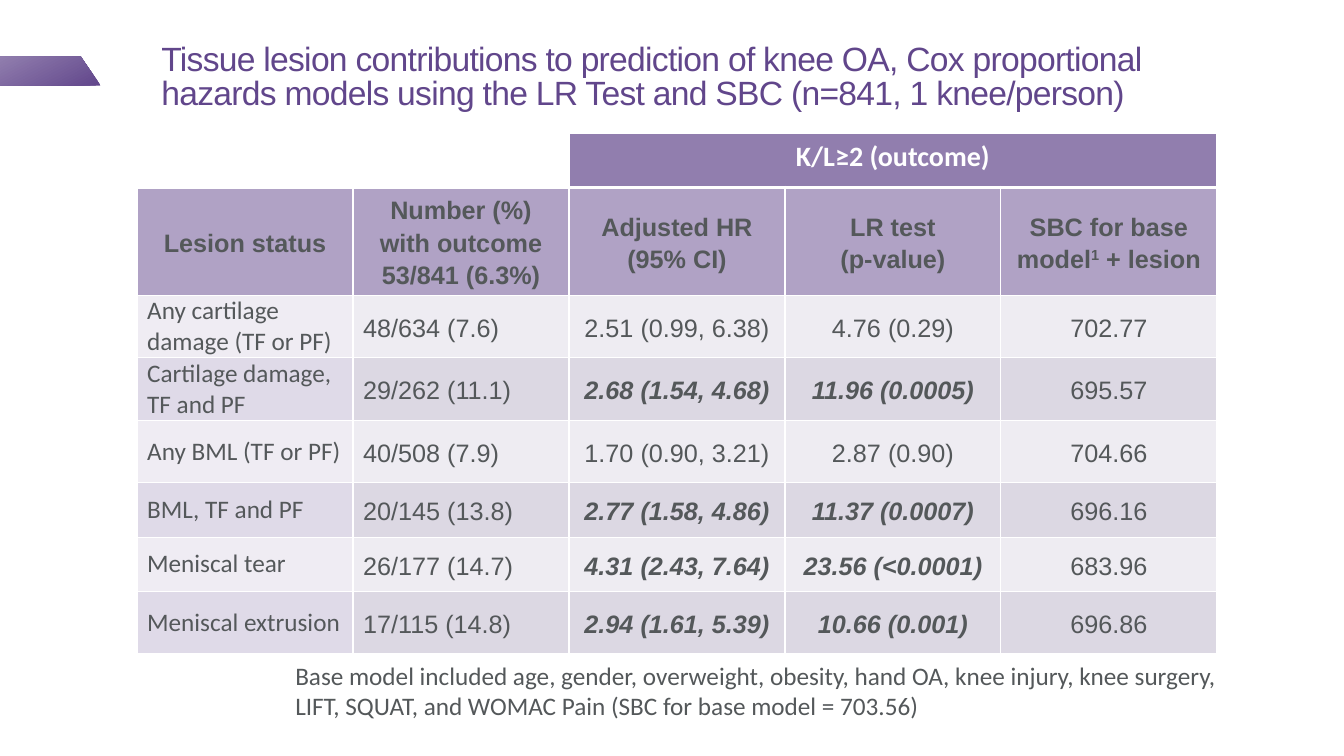
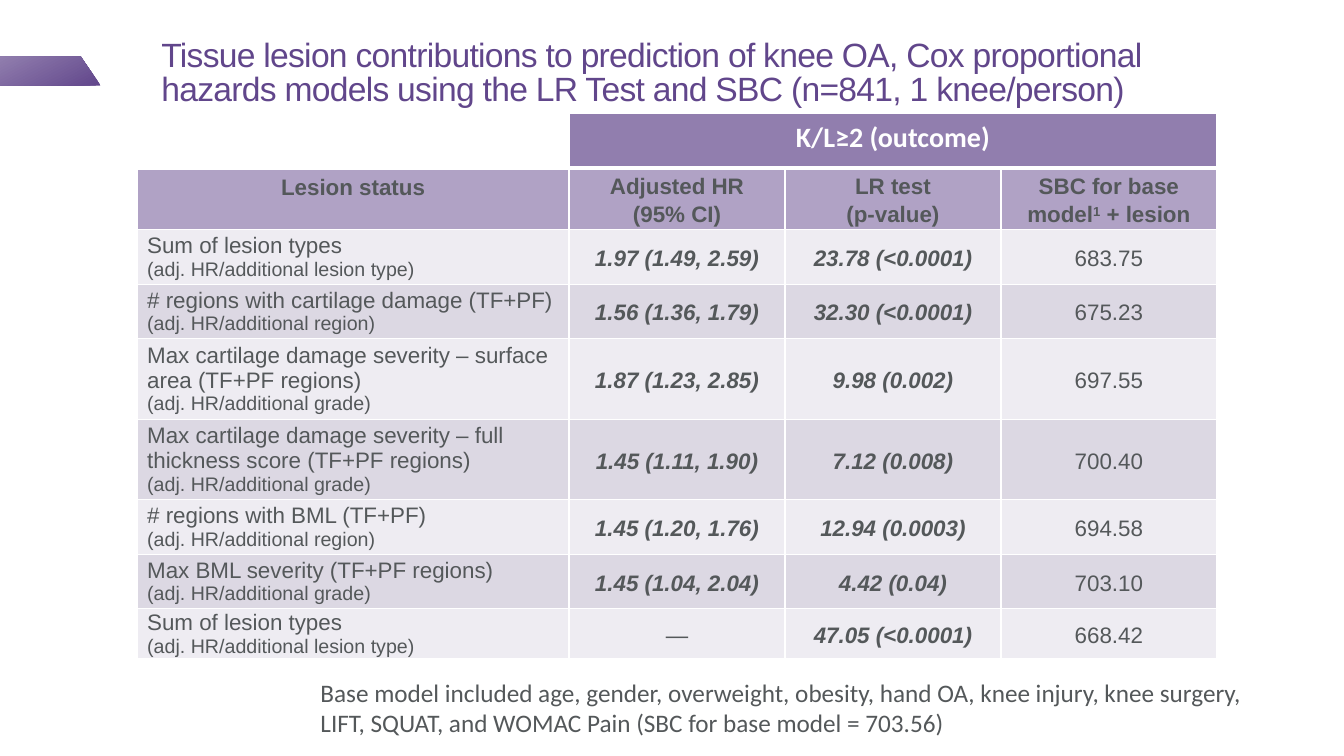
"""Build two slides of knee lesion tables that share one title, ribbon and note style."""
from lxml import etree
from pptx import Presentation
from pptx import util as u
from pptx.dml.color import RGBColor
from pptx.enum import text
from pptx.oxml.ns import qn

COLORS = {
    "title": "61468B", "band": "917EAE", "head": "B0A2C5", "text": "54585A",
    "white": "FFFFFF", "light": "EEECF2", "dark": "DCD8E3",
    "label_light": "EFECF3", "label_dark": "DFDAE8",
}
TITLE = ("Tissue lesion contributions to prediction of knee OA, Cox proportional "
         "hazards models using the LR Test and SBC (n=841, 1 knee/person)")
NOTE = ("Base model included age, gender, overweight, obesity, hand OA, knee injury, "
        "knee surgery, LIFT, SQUAT, and WOMAC Pain (SBC for base model = 703.56)")
OUTCOME = "K/L≥2 (outcome)"
MODEL_HEADS = [["Adjusted HR", "(95% CI)"], ["LR test", "(p-value)"],
               [("SBC for base model", "1", " + lesion")]]
TABLE_LEFT, UNIT = 1.36, 2.142

SLIDES = [
    {
        "title": (1.6, 0.19, 10.47, 0.98), "note": (2.83, 6.5, 9.45, 0.71),
        "top": 1.32, "size": 18, "label_font": "Calibri", "label_fill": "label_",
        "units": [1, 1, 1, 1, 1],
        "heights": [0.54, 1.07, 0.62, 0.62, 0.62, 0.54, 0.54, 0.62],
        "heads": [["Lesion status"], ["Number (%)", "with outcome", "53/841 (6.3%)"]],
        "rows": [
            (["Any cartilage damage (TF or PF)"], "48/634 (7.6)", "2.51 (0.99, 6.38)", "4.76 (0.29)", "702.77"),
            (["Cartilage damage, TF and PF"], "29/262 (11.1)", "2.68 (1.54, 4.68)", "11.96 (0.0005)", "695.57"),
            (["Any BML (TF or PF)"], "40/508 (7.9)", "1.70 (0.90, 3.21)", "2.87 (0.90)", "704.66"),
            (["BML, TF and PF"], "20/145 (13.8)", "2.77 (1.58, 4.86)", "11.37 (0.0007)", "696.16"),
            (["Meniscal tear"], "26/177 (14.7)", "4.31 (2.43, 7.64)", "23.56 (<0.0001)", "683.96"),
            (["Meniscal extrusion"], "17/115 (14.8)", "2.94 (1.61, 5.39)", "10.66 (0.001)", "696.86"),
        ],
    },
    {
        "title": (1.6, 0.25, 10.47, 0.88), "note": (3.08, 6.67, 9.82, 0.71),
        "top": 1.13, "size": 16, "label_font": "Arial", "label_fill": "",
        "units": [2, 1, 1, 1],
        "heights": [0.54, 0.61, 0.54, 0.54, 0.8, 0.8, 0.54, 0.54, 0.5],
        "heads": [["Lesion status"]],
        "rows": [
            (["Sum of lesion types", "(adj. HR/additional lesion type)"],
             "1.97 (1.49, 2.59)", "23.78 (<0.0001)", "683.75"),
            (["# regions with cartilage damage (TF+PF)", "(adj. HR/additional region)"],
             "1.56 (1.36, 1.79)", "32.30 (<0.0001)", "675.23"),
            (["Max cartilage damage severity – surface area (TF+PF regions)", "(adj. HR/additional grade)"],
             "1.87 (1.23, 2.85)", "9.98 (0.002)", "697.55"),
            (["Max cartilage damage severity – full thickness score (TF+PF regions)", "(adj. HR/additional grade)"],
             "1.45 (1.11, 1.90)", "7.12 (0.008)", "700.40"),
            (["# regions with BML (TF+PF)", "(adj. HR/additional region)"],
             "1.45 (1.20, 1.76)", "12.94 (0.0003)", "694.58"),
            (["Max BML severity (TF+PF regions)", "(adj. HR/additional grade)"],
             "1.45 (1.04, 2.04)", "4.42 (0.04)", "703.10"),
            (["Sum of lesion types", "(adj. HR/additional lesion type)"],
             "—", "47.05 (<0.0001)", "668.42"),
        ],
    },
]


def color(name):
    return RGBColor.from_string(COLORS[name])


def add_run(p, words, size, font="Arial", fill="text", bold=False, italic=False):
    r = p.add_run()
    r.text = words
    f = r.font
    f.size, f.name, f.bold, f.italic = u.Pt(size), font, bold, italic
    f.color.rgb = color(fill)
    return r


def place(sp, box):
    sp.left, sp.top, sp.width, sp.height = map(u.Inches, box)


def add_ribbon(prs, layout):
    s = prs.slides[0]
    builder = s.shapes.build_freeform(0, u.Inches(0.56))
    builder.add_line_segments([(u.Inches(x), u.Inches(y)) for x, y in
                               [(0.8, 0.56), (1, 0.85), (0, 0.85)]])
    sp = builder.convert_to_shape()
    sp.shadow.inherit = False
    sp.line.fill.background()
    sp.fill.gradient()
    sp.fill.gradient_angle = 118
    for stop, name in zip(sp.fill.gradient_stops, ("title", "band")):
        stop.color.rgb = color(name)
    layout.shapes.element.append(sp.element)


def add_title(s, box):
    sp = s.shapes.title
    place(sp, box)
    tf = sp.text_frame
    tf.word_wrap, tf.auto_size = True, text.MSO_AUTO_SIZE.NONE
    tf.vertical_anchor = text.MSO_ANCHOR.BOTTOM
    tf.margin_left = tf.margin_top = 0
    tf.margin_right, tf.margin_bottom = u.Inches(0.1), u.Inches(0.05)
    p = tf.paragraphs[0]
    p.alignment, p.line_spacing = text.PP_ALIGN.LEFT, 0.85
    add_run(p, TITLE, 24, fill="title").font._element.set("spc", "-50")


def add_note(s, box):
    sp = s.shapes.add_textbox(*map(u.Inches, box))
    tf = sp.text_frame
    tf.word_wrap, tf.auto_size = True, text.MSO_AUTO_SIZE.SHAPE_TO_FIT_TEXT
    add_run(tf.paragraphs[0], NOTE, 18, "Calibri")


def style_cell(cell, fill, top=1, bottom=1, roomy=False):
    tc_pr = cell._tc.get_or_add_tcPr()
    for side, width in zip("LRTB", (1, 1, top, bottom)):
        ln = etree.SubElement(tc_pr, qn(f"a:ln{side}"), w=str(u.Pt(width)))
        solid = etree.SubElement(ln, qn("a:solidFill"))
        etree.SubElement(solid, qn("a:srgbClr"), val=COLORS["white"])
    cell.fill.solid()
    cell.fill.fore_color.rgb = color(fill)
    cell.margin_left = cell.margin_right = u.Inches(0.13 if roomy else 0.1)
    cell.margin_top = cell.margin_bottom = u.Inches(0.07 if roomy else 0)
    cell.vertical_anchor = text.MSO_ANCHOR.TOP if roomy else text.MSO_ANCHOR.MIDDLE


def write_cell(cell, lines, sizes, centered=True, spacing=1.15, **style):
    tf = cell.text_frame
    for i, line in enumerate(lines):
        p = tf.add_paragraph() if i else tf.paragraphs[0]
        p.alignment = text.PP_ALIGN.CENTER if centered else text.PP_ALIGN.LEFT
        p.line_spacing = spacing
        parts = (line,) if isinstance(line, str) else line
        for j, part in enumerate(parts):
            r = add_run(p, part, sizes[min(i, len(sizes) - 1)], **style)
            if j == 1:
                r.font._element.set("baseline", "30000")


def add_lesion_table(s, data):
    units, heights, size = data["units"], data["heights"], data["size"]
    frame = s.shapes.add_table(len(heights), len(units), u.Inches(TABLE_LEFT), u.Inches(data["top"]),
                               u.Inches(sum(units) * UNIT), u.Inches(sum(heights)))
    table = frame.table
    table.first_row = table.horz_banding = False
    for col, n in zip(table.columns, units):
        col.width = u.Inches(n * UNIT)
    for row, height in zip(table.rows, heights):
        row.height = u.Inches(height)

    first = len(units) - len(MODEL_HEADS)
    for c in range(len(units)):
        style_cell(table.cell(0, c), "band" if c >= first else "white", bottom=3, roomy=True)
    if first > 1:
        table.cell(0, 0).merge(table.cell(0, first - 1))
    table.cell(0, first).merge(table.cell(0, len(units) - 1))
    write_cell(table.cell(0, first), [OUTCOME], [20], spacing=1, font="Calibri", fill="white", bold=True)

    for c, lines in enumerate(data["heads"] + MODEL_HEADS):
        roomy = units[c] > 1
        style_cell(table.cell(1, c), "head", top=3, roomy=roomy)
        write_cell(table.cell(1, c), lines, [size], spacing=1 if roomy else 1.15, bold=True)

    for i, (label, *values) in enumerate(data["rows"]):
        shade = "dark" if i % 2 else "light"
        cell = table.cell(i + 2, 0)
        style_cell(cell, data["label_fill"] + shade)
        write_cell(cell, label, [size, 14], centered=False, spacing=1, font=data["label_font"])
        significant = float(values[-2].split("(")[1].strip("<)")) < 0.05
        for c, value in enumerate(values, 1):
            strong = significant and c in (first, first + 1) and value != "—"
            cell = table.cell(i + 2, c)
            style_cell(cell, shade)
            write_cell(cell, [value], [size], centered=c >= first, bold=strong, italic=strong)


def main():
    prs = Presentation()
    prs.slide_width, prs.slide_height = u.Inches(13.33), u.Inches(7.5)
    layout = prs.slide_layouts[5]
    for data in SLIDES:
        s = prs.slides.add_slide(layout)
        add_title(s, data["title"])
        add_lesion_table(s, data)
        add_note(s, data["note"])
    add_ribbon(prs, layout)
    prs.save("out.pptx")


if __name__ == "__main__":
    main()
